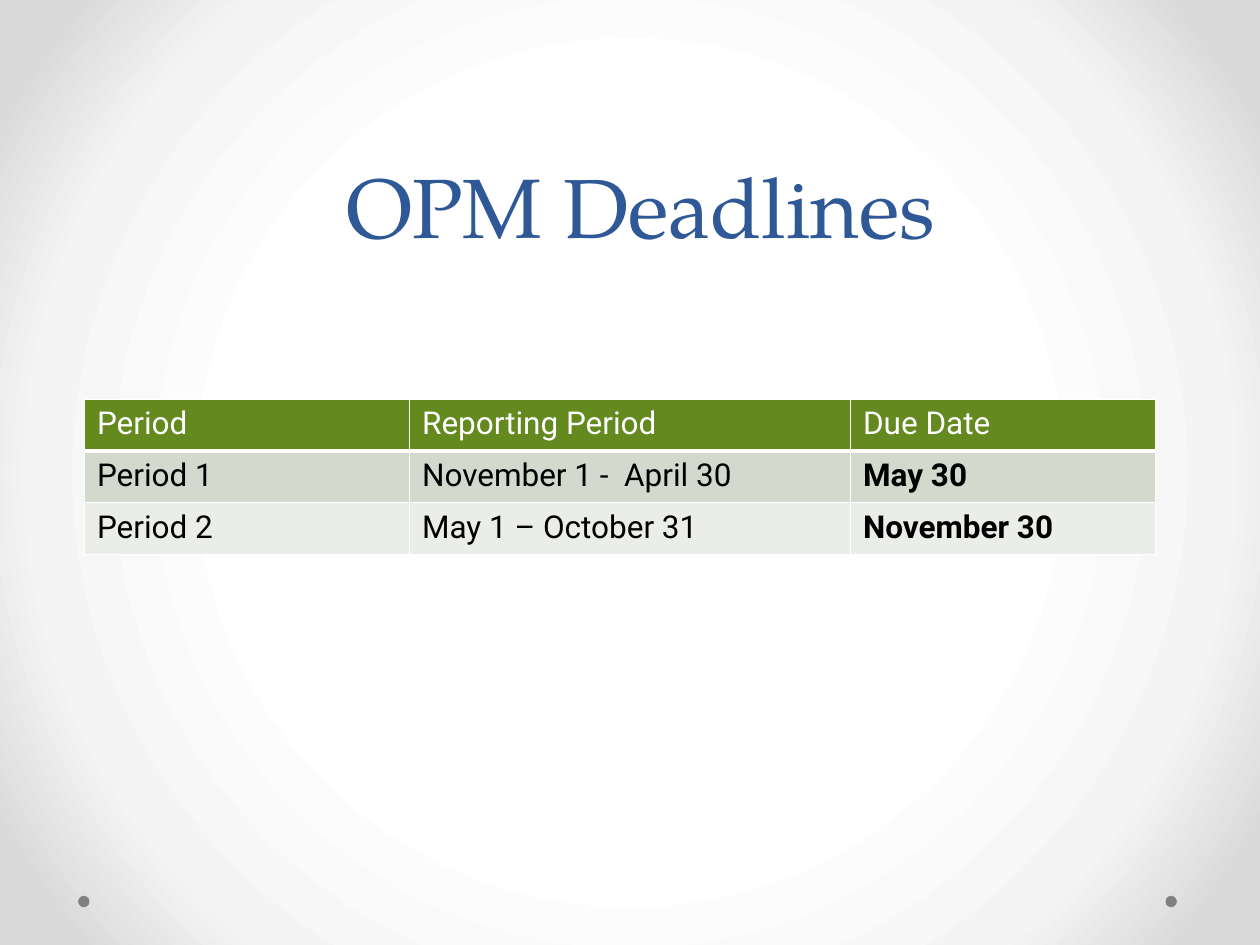
from lxml import etree
from pptx import Presentation
from pptx.dml.color import RGBColor
from pptx.enum.shapes import MSO_SHAPE
from pptx.enum.text import MSO_ANCHOR, PP_ALIGN
from pptx.oxml import parse_xml
from pptx.oxml.ns import nsdecls, qn
from pptx.util import Inches, Pt

OVAL = MSO_SHAPE.OVAL
MIDDLE = MSO_ANCHOR.MIDDLE
LEFT, CENTER = PP_ALIGN.LEFT, PP_ALIGN.CENTER
TITLE_ONLY = 5

COLORS = {
    "title": "2F5897",
    "header": "63891F",
    "bands": ("D3DACD", "EAEDE8"),
    "white": "FFFFFF",
    "black": "000000",
    "dot": "808080",
}
BACKDROP_STOPS = ((50, "FFFFFF"), (76, "F4F4F4"), (92, "DADADA"))
TITLE_FONT, BODY_FONT = "TeX Gyre Pagella", "Roboto"

COLUMN_WIDTHS = (2.58, 3.5, 2.42)
ROW_HEIGHT = 0.41
DEADLINES = (
    ("Period", "Reporting Period", "Due Date"),
    ("Period 1", "November 1 -  April 30", "May 30"),
    ("Period 2", "May 1 – October 31", "November 30"),
)


def write_text(frame, text, font, size, color, bold=False, align=LEFT, spacing=None):
    para = frame.paragraphs[0]
    para.alignment = align
    if spacing:
        para.line_spacing = Pt(spacing)
    span = para.add_run()
    span.text = text
    span.font.name = font
    span.font.size = Pt(size)
    span.font.bold = bold
    span.font.color.rgb = RGBColor.from_string(color)


def paint_backdrop(page):
    """Fill the background with a gradient that spreads from the centre."""
    page.background.fill.gradient()
    gradient = page.background._cSld.bg.bgPr.find(qn("a:gradFill"))
    stops = "".join(
        f'<a:gs pos="{position * 1000}"><a:srgbClr val="{color}"/></a:gs>'
        for position, color in BACKDROP_STOPS
    )
    radial = parse_xml(
        f'<a:gradFill {nsdecls("a")} rotWithShape="1"><a:gsLst>{stops}</a:gsLst>'
        '<a:path path="circle"><a:fillToRect l="50000" t="50000" r="50000" b="50000"/>'
        "</a:path></a:gradFill>"
    )
    gradient.getparent().replace(gradient, radial)


def add_dot(page, left, top, size=0.09):
    dot = page.shapes.add_shape(OVAL, Inches(left), Inches(top), Inches(size), Inches(size))
    dot.shadow.inherit = False
    dot.fill.solid()
    dot.fill.fore_color.rgb = RGBColor.from_string(COLORS["dot"])
    dot.line.fill.background()


def place_title(page, text):
    title = page.shapes.title
    title.left, title.top = Inches(0.67), Inches(1)
    title.width, title.height = Inches(8.83), Inches(1.25)
    title.text_frame.vertical_anchor = MIDDLE
    write_text(title.text_frame, text, TITLE_FONT, 48, COLORS["title"],
               align=CENTER, spacing=58)


def set_borders(cell, color, bottom=1):
    properties = cell._tc.get_or_add_tcPr()
    for side, width in (("L", 1), ("R", 1), ("T", 1), ("B", bottom)):
        line = etree.SubElement(properties, qn(f"a:ln{side}"), w=str(Pt(width)))
        fill = etree.SubElement(line, qn("a:solidFill"))
        etree.SubElement(fill, qn("a:srgbClr"), val=color)


def add_deadline_table(page, left, top):
    frame = page.shapes.add_table(
        len(DEADLINES), len(COLUMN_WIDTHS), Inches(left), Inches(top),
        Inches(sum(COLUMN_WIDTHS)), Inches(ROW_HEIGHT * len(DEADLINES)))
    table = frame.table
    for column, width in zip(table.columns, COLUMN_WIDTHS):
        column.width = Inches(width)

    for row_index, texts in enumerate(DEADLINES):
        table.rows[row_index].height = Inches(ROW_HEIGHT)
        is_header = row_index == 0
        fill = COLORS["header"] if is_header else COLORS["bands"][row_index - 1]
        color = COLORS["white"] if is_header else COLORS["black"]
        for column_index, text in enumerate(texts):
            cell = table.cell(row_index, column_index)
            set_borders(cell, COLORS["white"], bottom=3 if is_header else 1)
            cell.fill.solid()
            cell.fill.fore_color.rgb = RGBColor.from_string(fill)
            is_due_date = column_index == len(texts) - 1 and not is_header
            write_text(cell.text_frame, text, BODY_FONT, 18, color, bold=is_due_date)


def main():
    deck = Presentation()
    deck.slide_width, deck.slide_height = Inches(10), Inches(7.5)
    page = deck.slides.add_slide(deck.slide_layouts[TITLE_ONLY])

    # Backdrop and corner dots
    paint_backdrop(page)
    for left in (9.25, 0.62):
        add_dot(page, left, 7.11)

    # Content
    place_title(page, "OPM Deadlines")
    add_deadline_table(page, 0.67, 3.17)

    deck.save("out.pptx")


if __name__ == "__main__":
    main()
